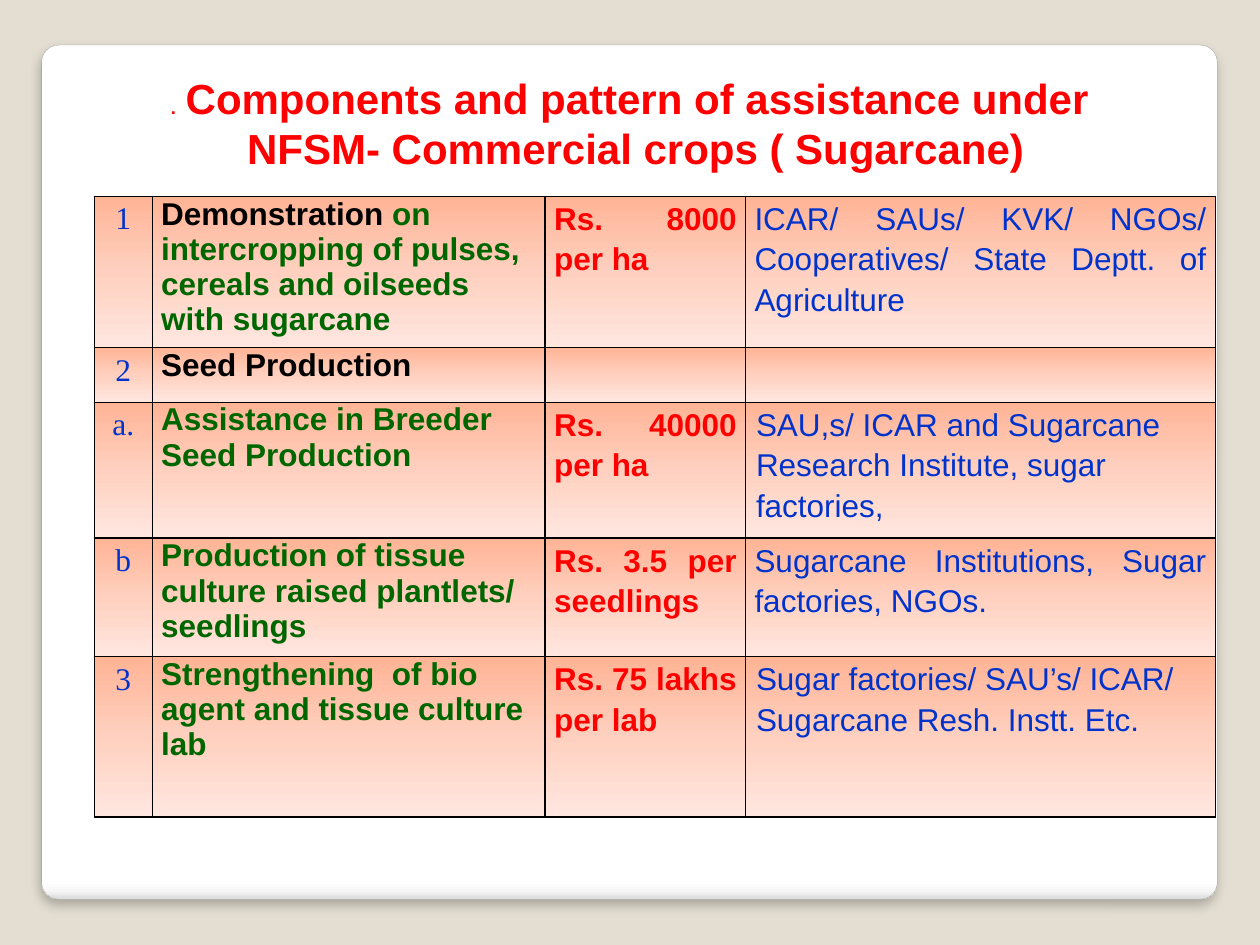
import pptx
import pptx.util
import pptx.oxml
import pptx.oxml.ns
import pptx.dml.color
import pptx.enum.shapes
import pptx.enum.text

Cm, Pt = pptx.util.Cm, pptx.util.Pt
ALIGN = pptx.enum.text.PP_ALIGN
NS = pptx.oxml.ns.nsdecls("a")
RED, BLUE, GREEN, BLACK = "FF0000", "0033CC", "006600", "000000"


def color(hex_text):
    return pptx.dml.color.RGBColor.from_string(hex_text)


def add_gradient(props, stops):
    """Append a top-to-bottom gradient fill to shape or cell properties."""
    marks = "".join(f'<a:gs pos="{pos * 1000}"><a:srgbClr val="{tone}"/></a:gs>'
                    for pos, tone in stops)
    props.append(pptx.oxml.parse_xml(
        f'<a:gradFill {NS} rotWithShape="1"><a:gsLst>{marks}</a:gsLst>'
        '<a:lin ang="5400000" scaled="0"/></a:gradFill>'))


deck = pptx.Presentation()
deck.slide_width, deck.slide_height = Cm(25.4), Cm(19.05)
page = deck.slides.add_slide(deck.slide_layouts[5])
page.background.fill.solid()
page.background.fill.fore_color.rgb = color("E3DED1")

# White rounded card, placed behind the title
card = page.shapes.add_shape(pptx.enum.shapes.MSO_SHAPE.ROUNDED_RECTANGLE,
                             Cm(0.84), Cm(0.91), Cm(23.7), Cm(17.22))
card.adjustments[0] = 0.02
add_gradient(card._element.spPr,
             [(0, "FFFFFF"), (98, "FFFFFF"), (99, "F7F7F7"), (100, "DADADA")])
card.line.color.rgb = color("A4A4A4")
card.line.width = Pt(0.16)
card.shadow.inherit = False
effects = card._element.spPr.find(pptx.oxml.ns.qn("a:effectLst"))
effects.append(pptx.oxml.parse_xml(
    f'<a:outerShdw {NS} blurRad="{Pt(6)}" dist="{Pt(4)}" dir="5400000" algn="tl" '
    'rotWithShape="0"><a:srgbClr val="000000"><a:alpha val="25000"/></a:srgbClr>'
    '</a:outerShdw>'))
title = page.shapes.title
title._element.addprevious(card._element)

# Title
title.left, title.top, title.width, title.height = Cm(3.1), Cm(1.32), Cm(19.43), Cm(2.31)
frame = title.text_frame
frame.word_wrap = False
frame.auto_size = pptx.enum.text.MSO_AUTO_SIZE.SHAPE_TO_FIT_TEXT
frame.vertical_anchor = pptx.enum.text.MSO_ANCHOR.MIDDLE
title_lines = [
    [(".", 10.5), (" ", 20), ("Components and pattern of assistance under ", 24)],
    [("NFSM- Commercial crops ( Sugarcane)", 24)],
]
for number, spans in enumerate(title_lines):
    para = frame.add_paragraph() if number else frame.paragraphs[0]
    para.alignment = ALIGN.CENTER
    for text, size in spans:
        span = para.add_run()
        span.text = text
        span.font.name, span.font.size, span.font.bold = "Arial", Pt(size), True
        span.font.color.rgb = color(RED)

# Table content: number, component, assistance, agencies
rows = [
    ("1", [("Demonstration ", BLACK),
           ("on intercropping of pulses, cereals and oilseeds with sugarcane", GREEN)],
     "Rs. 8000 per ha",
     "ICAR/ SAUs/ KVK/ NGOs/ Cooperatives/ State Deptt. of Agriculture"),
    ("2", [("Seed Production", BLACK)], "", ""),
    ("a.", [("Assistance in Breeder Seed Production", GREEN)], "Rs. 40000 per ha",
     "SAU,s/ ICAR and Sugarcane Research Institute, sugar factories,"),
    ("b", [("Production of tissue culture raised plantlets/ seedlings", GREEN)],
     "Rs. 3.5 per seedlings", "Sugarcane Institutions, Sugar factories, NGOs."),
    ("3", [("Strengthening  of bio agent and tissue culture lab", GREEN)],
     "Rs. 75 lakhs per lab",
     "Sugar factories/ SAU’s/ ICAR/ Sugarcane Resh. Instt. Etc."),
]
row_heights = [3.03, 1.1, 2.74, 2.39, 3.23]
left_aligned_agencies = {"a.", "3"}

# Column rules: width, font, bold, colour, alignment, line spacing
columns = [
    (1.17, "Times New Roman", False, BLUE, ALIGN.CENTER, 1.15),
    (7.92, "Arial", True, GREEN, ALIGN.LEFT, 1.0),
    (4.04, "Arial", True, RED, ALIGN.JUSTIFY, 1.15),
    (9.47, "Arial", False, BLUE, ALIGN.JUSTIFY, 1.15),
]
table = page.shapes.add_table(len(rows), len(columns), Cm(1.9), Cm(3.96),
                              Cm(22.6), Cm(sum(row_heights))).table
table.first_row = table.horz_banding = False
for row, height in zip(table.rows, row_heights):
    row.height = Cm(height)

for c, (width, font, bold, tone, align, spacing) in enumerate(columns):
    table.columns[c].width = Cm(width)
    for r, values in enumerate(rows):
        cell = table.cell(r, c)
        cell.margin_left = cell.margin_right = Cm(0.18)
        cell.margin_top = cell.margin_bottom = 0

        # Borders come before the fill in the cell properties
        props = cell._tc.get_or_add_tcPr()
        for side in "LRTB":
            props.append(pptx.oxml.parse_xml(
                f'<a:ln{side} {NS} w="{Pt(1)}"><a:solidFill><a:srgbClr val="{BLACK}"/>'
                f'</a:solidFill></a:ln{side}>'))
        add_gradient(props, [(0, "FFB496"), (50, "FFD0BF"), (100, "FFE7E0")])

        para = cell.text_frame.paragraphs[0]
        para.alignment, para.line_spacing = align, spacing
        if c == 3 and values[0] in left_aligned_agencies:
            para.alignment = ALIGN.LEFT
            para._p.get_or_add_pPr().set("marL", str(Cm(0.03)))
        spans = values[c] if c == 1 else [(values[c], tone)]
        for text, span_tone in spans:
            if text:
                span = para.add_run()
                span.text = text
                span.font.name, span.font.size, span.font.bold = font, Pt(18), bold
                span.font.color.rgb = color(span_tone)

deck.save("out.pptx")
